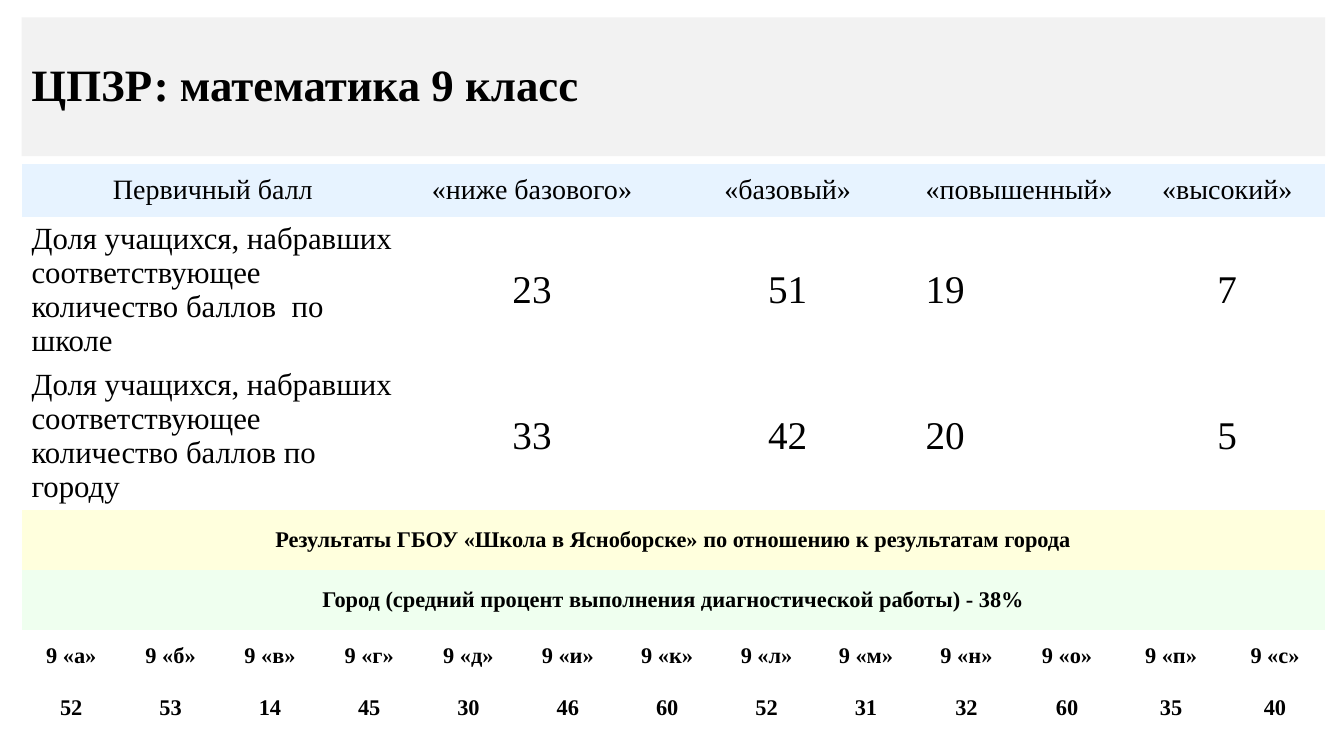
from pptx import Presentation
from pptx.dml.color import RGBColor
from pptx.enum import shapes, text
from pptx.util import Pt

TITLE = "ЦПЗР: математика 9 класс"
LEVELS = ["Первичный балл", "«ниже базового»", "«базовый»", "«повышенный»", "«высокий»"]
SHARES = [
    ["Доля учащихся, набравших соответствующее количество баллов  по школе", "23", "51", "19", "7"],
    ["Доля учащихся, набравших соответствующее количество баллов по городу", "33", "42", "20", "5"],
]
SCHOOL_RESULTS = "Результаты ГБОУ «Школа в Ясноборске» по отношению к результатам города"
CITY_AVERAGE = "Город (средний процент выполнения диагностической работы) - 38%"
CLASS_SCORES = {
    "а": 52, "б": 53, "в": 14, "г": 45, "д": 30, "и": 46, "к": 60,
    "л": 52, "м": 31, "н": 32, "о": 60, "п": 35, "с": 40,
}

THEME = {
    "font": "Times New Roman",
    "ink": "000000", "title_fill": "F2F2F2", "header_fill": "E7F3FF",
    "plain_fill": "FFFFFF", "school_fill": "FFFFDD", "city_fill": "EFFFEF",
    "title_size": 32, "header_size": 20, "label_size": 22,
    "share_size": 28, "small_size": 16,
}
NO_GRID_STYLE = "{2D5ABB26-0587-4C30-8999-92F81FD0307C}"

# Column counts covered by each cell of a row
LEVEL_SPANS = [4, 4, 3, 3, 2]
CLASS_SPANS = [1, 1, 1, 2, 1, 1, 2, 1, 1, 1, 1, 2, 1]
FULL_SPAN = [16]
COLUMN_WIDTHS = [71, 71, 71, 60.5, 10.3, 71, 71, 30.2, 40.8, 71, 71, 72.7, 71, 9.4, 68.2, 71]
ROW_HEIGHTS = [37.6, 103.2, 103.2, 43, 43, 37.2, 37.2]
LEFT, WIDTH = 15.4, sum(COLUMN_WIDTHS)
TITLE_TOP, TITLE_HEIGHT, TABLE_TOP = 12.4, 99.2, 117.2
LEFT_ALIGN, CENTER = text.PP_ALIGN.LEFT, text.PP_ALIGN.CENTER


def color(name):
    return RGBColor.from_string(THEME[name])


def write(paragraph, wording, size, bold=False, align=LEFT_ALIGN):
    paragraph.text = wording
    paragraph.alignment = align
    for run in paragraph.runs:
        run.font.name = THEME["font"]
        run.font.size = Pt(THEME[size])
        run.font.bold = bold
        run.font.color.rgb = color("ink")


def add_title(slide):
    shape = slide.shapes.add_shape(
        shapes.MSO_SHAPE.RECTANGLE, Pt(LEFT), Pt(TITLE_TOP), Pt(WIDTH), Pt(TITLE_HEIGHT))
    shape.shadow.inherit = False
    shape.fill.solid()
    shape.fill.fore_color.rgb = color("title_fill")
    shape.line.fill.background()
    shape.text_frame.vertical_anchor = text.MSO_ANCHOR.MIDDLE
    paragraph = shape.text_frame.paragraphs[0]
    write(paragraph, TITLE, "title_size", bold=True)
    paragraph.line_spacing = 0.9


def fill_row(table, row, spans, wordings, fill, sizes, bold=False, left_cells=()):
    """Merge the row's columns by spans and write one wording into each cell."""
    column = 0
    for index, (span, wording) in enumerate(zip(spans, wordings)):
        cell = table.cell(row, column)
        if span > 1:
            cell.merge(table.cell(row, column + span - 1))
        cell.fill.solid()
        cell.fill.fore_color.rgb = color(fill)
        cell.vertical_anchor = text.MSO_ANCHOR.MIDDLE
        align = LEFT_ALIGN if index in left_cells else CENTER
        write(cell.text_frame.paragraphs[0], wording, sizes[index], bold, align)
        column += span


def add_results(slide):
    frame = slide.shapes.add_table(
        len(ROW_HEIGHTS), len(COLUMN_WIDTHS),
        Pt(LEFT), Pt(TABLE_TOP), Pt(WIDTH), Pt(sum(ROW_HEIGHTS)))
    frame.element.xpath(".//a:tableStyleId")[0].text = NO_GRID_STYLE
    table = frame.table
    table.first_row = table.horz_banding = False
    for column, width in zip(table.columns, COLUMN_WIDTHS):
        column.width = Pt(width)
    for row, height in zip(table.rows, ROW_HEIGHTS):
        row.height = Pt(height)

    fill_row(table, 0, LEVEL_SPANS, LEVELS, "header_fill", ["header_size"] * 5, left_cells=[3])
    share_sizes = ["label_size"] + ["share_size"] * 4
    for row, shares in enumerate(SHARES, start=1):
        fill_row(table, row, LEVEL_SPANS, shares, "plain_fill", share_sizes, left_cells=[0, 3])

    class_names = [f"9 «{letter}»" for letter in CLASS_SCORES]
    scores = [str(score) for score in CLASS_SCORES.values()]
    small_rows = [
        (FULL_SPAN, [SCHOOL_RESULTS], "school_fill"),
        (FULL_SPAN, [CITY_AVERAGE], "city_fill"),
        (CLASS_SPANS, class_names, "plain_fill"),
        (CLASS_SPANS, scores, "plain_fill"),
    ]
    for row, (spans, wordings, fill) in enumerate(small_rows, start=3):
        fill_row(table, row, spans, wordings, fill, ["small_size"] * len(spans), bold=True)


def main():
    presentation = Presentation()
    presentation.slide_width, presentation.slide_height = Pt(960), Pt(540)
    slide = presentation.slides.add_slide(presentation.slide_layouts[6])
    add_title(slide)
    add_results(slide)
    presentation.save("out.pptx")


if __name__ == "__main__":
    main()
